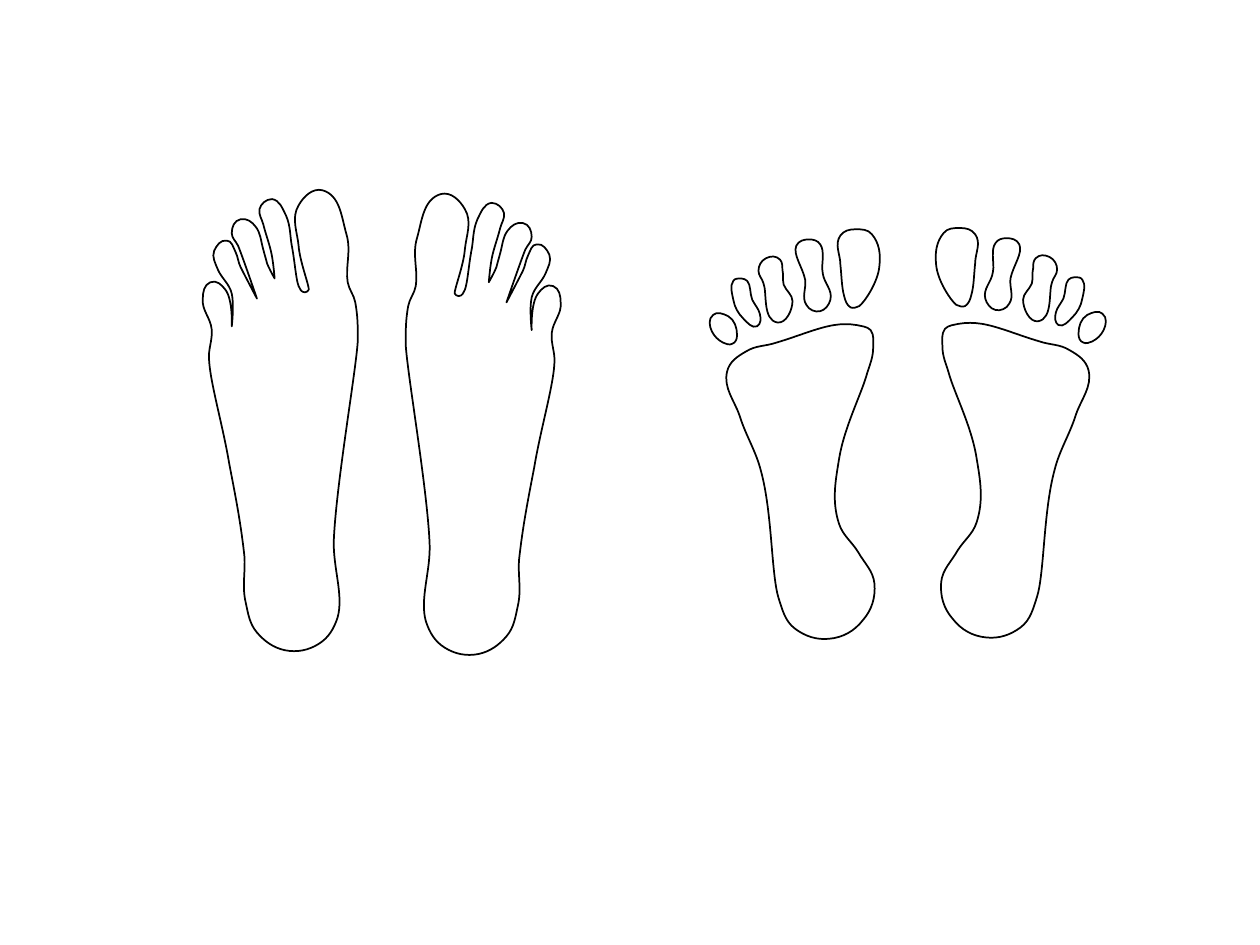
from math import dist, hypot

from pptx import Presentation as Deck
from pptx.dml.color import RGBColor as Rgb
from pptx.oxml.xmlchemy import OxmlElement as Node
from pptx.util import Pt

HEX = {"skin": "FFFFFF", "ink": "010101"}
PAGE = {"slide_width": Pt(720), "slide_height": Pt(540)}
UNIT = Pt(0.72)
PULL = 0.36
REACH = 2

FOOT = {
    "heel": [(195, 478), (204, 502), (226, 516), (253, 511), (268, 490)],
    "inner side": [(265, 428), (284, 270), (282, 240)],
    "ball": [(276, 224), (275, 186)],
    "big toe": [(256, 151), (237, 163), (237, 195)],
    "first gap": [(245, 230), (242, 232), (237, 227)],
    "second toe": [(232, 197), (227, 171), (216, 158), (206, 166),
                   (209, 178), (215, 199)],
    "second notch": [(218, 221)],
    "third toe": [(212, 209), (209, 198), (203, 180), (191, 174),
                  (184, 185), (189, 195)],
    "third notch": [(204, 237)],
    "fourth toe": [(191, 212), (187, 200), (180, 191), (170, 199),
                   (173, 214), (184, 233)],
    "fourth notch": [(184, 259)],
    "little toe": [(179, 230), (167, 224), (161, 237), (168, 261)],
    "outer side": [(166, 286), (182, 368), (194, 441)],
}
SOLE = {
    "outer side": [(577, 295), (587, 330), (604, 374), (618, 475)],
    "heel": [(631, 499), (658, 507), (685, 492), (694, 463), (681, 438)],
    "arch": [(666, 416), (666, 364), (688, 297)],
    "ball": [(693, 276), (691, 262), (680, 258), (662, 258)],
    "toe side": [(616, 272), (592, 279)],
}
TOES = {
    "little": [(565, 263), (566, 250), (578, 251), (585, 266),
               (581, 273), (574, 272)],
    "fourth": [(597, 238), (593, 223), (588, 221), (582, 223),
               (582, 238), (590, 253), (601, 259), (603, 249)],
    "third": [(622, 226), (621, 214), (619, 206), (608, 205),
              (602, 215), (606, 225), (617, 256), (629, 239)],
    "second": [(653, 217), (653, 204), (651, 194), (642, 190), (632, 195),
               (639, 222), (640, 242), (651, 247), (659, 238)],
    "big": [(667, 187), (679, 182), (692, 186), (698, 211),
            (682, 243), (675, 244), (670, 235), (667, 210)],
}
PRINT = [SOLE] + [{name: spots} for name, spots in TOES.items()]
SETS = [
    {"parts": [FOOT], "flip": None},
    {"parts": PRINT, "flip": None},
    {"parts": [FOOT], "flip": {"sum": 606, "drop": 3}},
    {"parts": PRINT, "flip": {"sum": 1441, "drop": -1}},
]


def mirror(spot, flip):
    x, y = spot
    return (flip["sum"] - x, y + flip["drop"]) if flip else spot


def grips(last, here, after, sharp):
    if sharp:
        return here, here
    back, front = dist(last, here), dist(here, after)
    way = [(h - a) / back + (b - h) / front
           for a, h, b in zip(last, here, after)]
    size = hypot(*way)
    near = PULL * min(back, REACH * front) / size
    far = PULL * min(front, REACH * back) / size
    return (tuple(round(h - near * w) for h, w in zip(here, way)),
            tuple(round(h + far * w) for h, w in zip(here, way)))


def smooth(part, flip):
    spots = [(mirror(spot, flip), "notch" in name)
             for name, group in part.items() for spot in group]
    count = len(spots)
    knots = []
    for i, (here, sharp) in enumerate(spots):
        last, after = spots[i - 1][0], spots[(i + 1) % count][0]
        knots.append((here, *grips(last, here, after, sharp)))
    ends = knots[1:] + knots[:1]
    return knots[0][0], [spot for (_, _, out), (here, into, _) in zip(knots, ends)
                         for spot in (out, into, here)]


def bend(shape):
    lines = shape._element.xpath(".//a:lnTo")
    for i in range(0, len(lines) - 2, 3):
        curve = Node("a:cubicBezTo")
        lines[i].addprevious(curve)
        for line in lines[i:i + 3]:
            curve.append(line[0])
            line.getparent().remove(line)


def draw(slide, part, flip):
    start, spots = smooth(part, flip)
    pen = slide.shapes.build_freeform(*start, scale=UNIT)
    pen.add_line_segments(spots, close=True)
    shape = pen.convert_to_shape()
    bend(shape)
    shape.fill.solid()
    shape.line.fill.solid()
    looks = [
        (shape.shadow, {"inherit": False}),
        (shape.fill.fore_color, {"rgb": Rgb.from_string(HEX["skin"])}),
        (shape.line.color, {"rgb": Rgb.from_string(HEX["ink"])}),
        (shape.line, {"width": Pt(1)}),
    ]
    for item, form in looks:
        for key, val in form.items():
            setattr(item, key, val)
    return shape


def main():
    deck = Deck()
    for key, val in PAGE.items():
        setattr(deck, key, val)
    slide = deck.slides.add_slide(deck.slide_layouts[6])
    for item in SETS:
        shapes = [draw(slide, part, item["flip"]) for part in item["parts"]]
        if len(shapes) > 1:
            slide.shapes.add_group_shape(shapes)
    deck.save("out.pptx")


if __name__ == "__main__":
    main()
